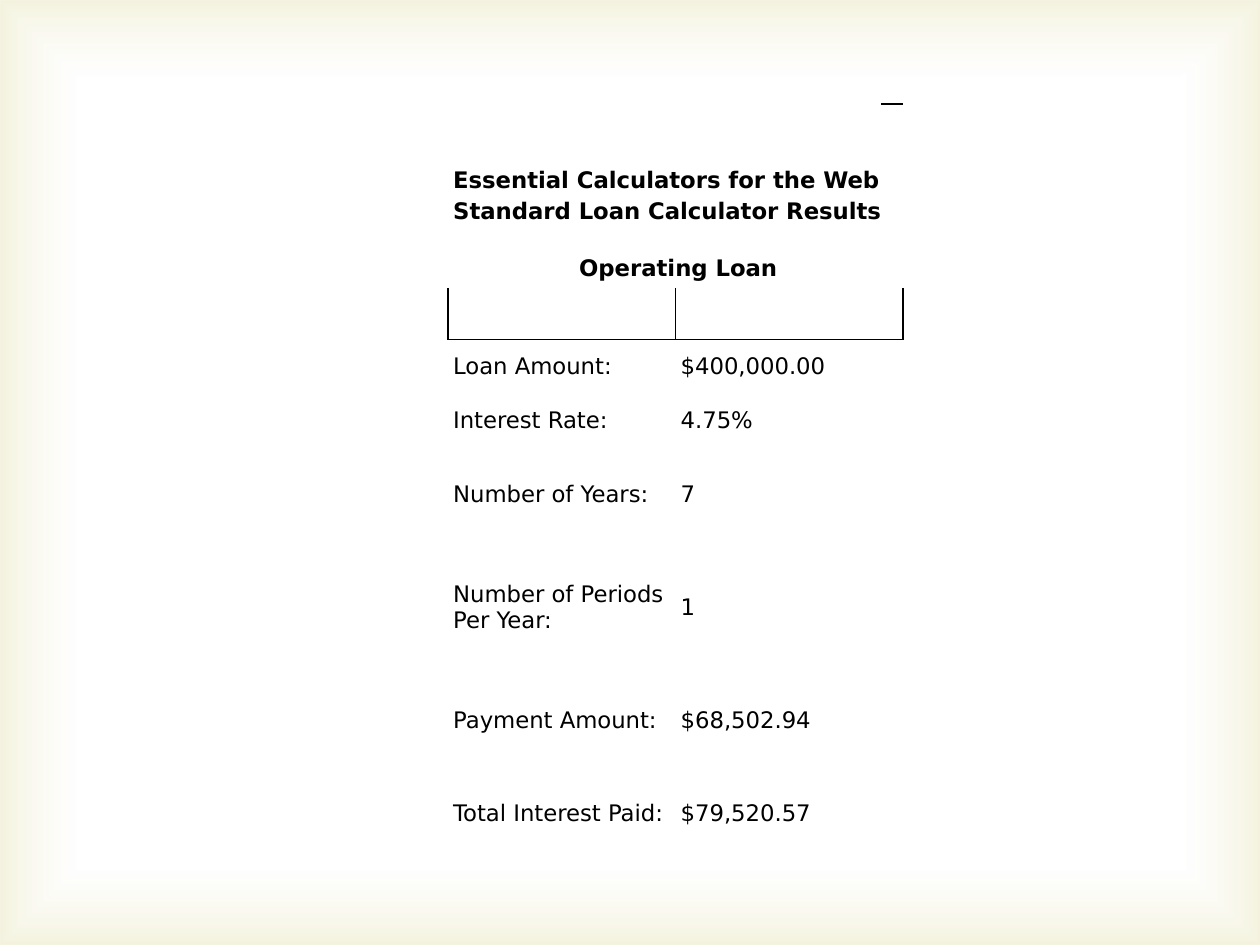
import pptx
import pptx.dml.color
import pptx.enum.shapes
import pptx.enum.text
import pptx.oxml
import pptx.oxml.ns
import pptx.util

Pt = pptx.util.Pt
BLACK = pptx.dml.color.RGBColor(0x00, 0x00, 0x00)
WHITE = pptx.dml.color.RGBColor(0xFF, 0xFF, 0xFF)
KHAKI = pptx.dml.color.RGBColor(0xD1, 0xCA, 0x75)

FONT = "DejaVu Sans"
FONT_SIZE = Pt(13)
CELL_MARGIN = Pt(3)
NO_STYLE_NO_GRID = "{2D5ABB26-0587-4C30-8999-92F81FD0307C}"

COLUMN_WIDTHS = [130, 117.5, 12.5]
ROW_HEIGHTS = [29.5, 75.6, 29.5, 31, 31, 53.3, 75.6, 53.3, 53.3]
HEADING_ROW, RULED_ROW, FIRST_RESULT_ROW = 1, 2, 3
RESULTS = [
    ("Loan Amount:", "$400,000.00"),
    ("Interest Rate:", "4.75%"),
    ("Number of Years:", "7"),
    ("Number of Periods Per Year:", "1"),
    ("Payment Amount:", "$68,502.94"),
    ("Total Interest Paid:", "$79,520.57"),
]


def add_run(paragraph, text, bold=False):
    run = paragraph.add_run()
    run.text = text
    run.font.name = FONT
    run.font.size = FONT_SIZE
    run.font.bold = bold
    run.font.color.rgb = BLACK


def add_borders(cell, *sides):
    """Draw black borders on the given sides, in the order L, R, T, B."""
    properties = cell._tc.get_or_add_tcPr()
    for index, side in enumerate(sides):
        properties.insert(index, pptx.oxml.parse_xml(
            f'<a:ln{side} {pptx.oxml.ns.nsdecls("a")} w="{Pt(1)}">'
            f'<a:solidFill><a:srgbClr val="{BLACK}"/></a:solidFill>'
            f'</a:ln{side}>'))


def add_background(slide, left, top, width, height):
    shape = slide.shapes.add_shape(
        pptx.enum.shapes.MSO_SHAPE.RECTANGLE, left, top, width, height)
    shape.shadow.inherit = False
    shape.line.fill.background()

    # Rectangular gradient that only tints the rim
    stops = "".join(
        f'<a:gs pos="{position}000"><a:srgbClr val="{color}">'
        f'<a:alpha val="{opacity}000"/></a:srgbClr></a:gs>'
        for position, color, opacity in [(83, WHITE, 11), (100, KHAKI, 23)])
    gradient = pptx.oxml.parse_xml(
        f'<a:gradFill {pptx.oxml.ns.nsdecls("a")}><a:gsLst>{stops}</a:gsLst>'
        '<a:path path="rect"><a:fillToRect l="50000" t="50000" r="50000" '
        'b="50000"/></a:path></a:gradFill>')
    geometry = shape._element.spPr.find(pptx.oxml.ns.qn("a:prstGeom"))
    geometry.addnext(gradient)


def fill_heading(cell):
    title = cell.text_frame.paragraphs[0]
    title.line_spacing = Pt(18)
    add_run(title, "Essential Calculators for the Web "
                   "Standard Loan Calculator Results", bold=True)
    loan_name = cell.text_frame.add_paragraph()
    loan_name.space_before = Pt(17.5)
    loan_name._p.get_or_add_pPr().set("marL", str(Pt(72)))
    add_run(loan_name, "Operating Loan", bold=True)


def add_loan_table(slide, left, top, width, height):
    frame = slide.shapes.add_table(
        len(ROW_HEIGHTS), len(COLUMN_WIDTHS), left, top, width, height)
    table = frame.table
    table.first_row = table.horz_banding = False
    style = frame._element.find(".//" + pptx.oxml.ns.qn("a:tableStyleId"))
    style.text = NO_STYLE_NO_GRID

    # Grid
    for column, column_width in zip(table.columns, COLUMN_WIDTHS):
        column.width = Pt(column_width)
    for row, row_height in zip(table.rows, ROW_HEIGHTS):
        row.height = Pt(row_height)
    for cell in table.iter_cells():
        cell.fill.background()
        cell.vertical_anchor = pptx.enum.text.MSO_ANCHOR.MIDDLE
        cell.margin_left = cell.margin_right = CELL_MARGIN
        cell.margin_top = cell.margin_bottom = CELL_MARGIN

    # Merged cells
    table.cell(0, 0).merge(table.cell(0, 1))
    table.cell(HEADING_ROW, 0).merge(table.cell(HEADING_ROW, 2))
    for row in range(RULED_ROW, len(ROW_HEIGHTS)):
        table.cell(row, 1).merge(table.cell(row, 2))

    # Visible borders
    add_borders(table.cell(0, 2), "T")
    add_borders(table.cell(RULED_ROW, 0), "L", "R", "B")
    add_borders(table.cell(RULED_ROW, 1), "L", "R", "B")
    add_borders(table.cell(RULED_ROW, 2), "R", "B")

    # Text
    fill_heading(table.cell(HEADING_ROW, 0))
    for row, result in enumerate(RESULTS, FIRST_RESULT_ROW):
        for column, text in enumerate(result):
            paragraph = table.cell(row, column).text_frame.paragraphs[0]
            add_run(paragraph, text)


def main():
    presentation = pptx.Presentation()
    presentation.slide_width = Pt(720)
    presentation.slide_height = Pt(540)
    slide = presentation.slides.add_slide(presentation.slide_layouts[6])
    slide.background.fill.solid()
    slide.background.fill.fore_color.rgb = WHITE
    add_background(slide, 0, 0, Pt(720), Pt(540))
    add_loan_table(slide, Pt(256), Pt(59.5), Pt(260), Pt(432))
    presentation.save("out.pptx")


if __name__ == "__main__":
    main()
